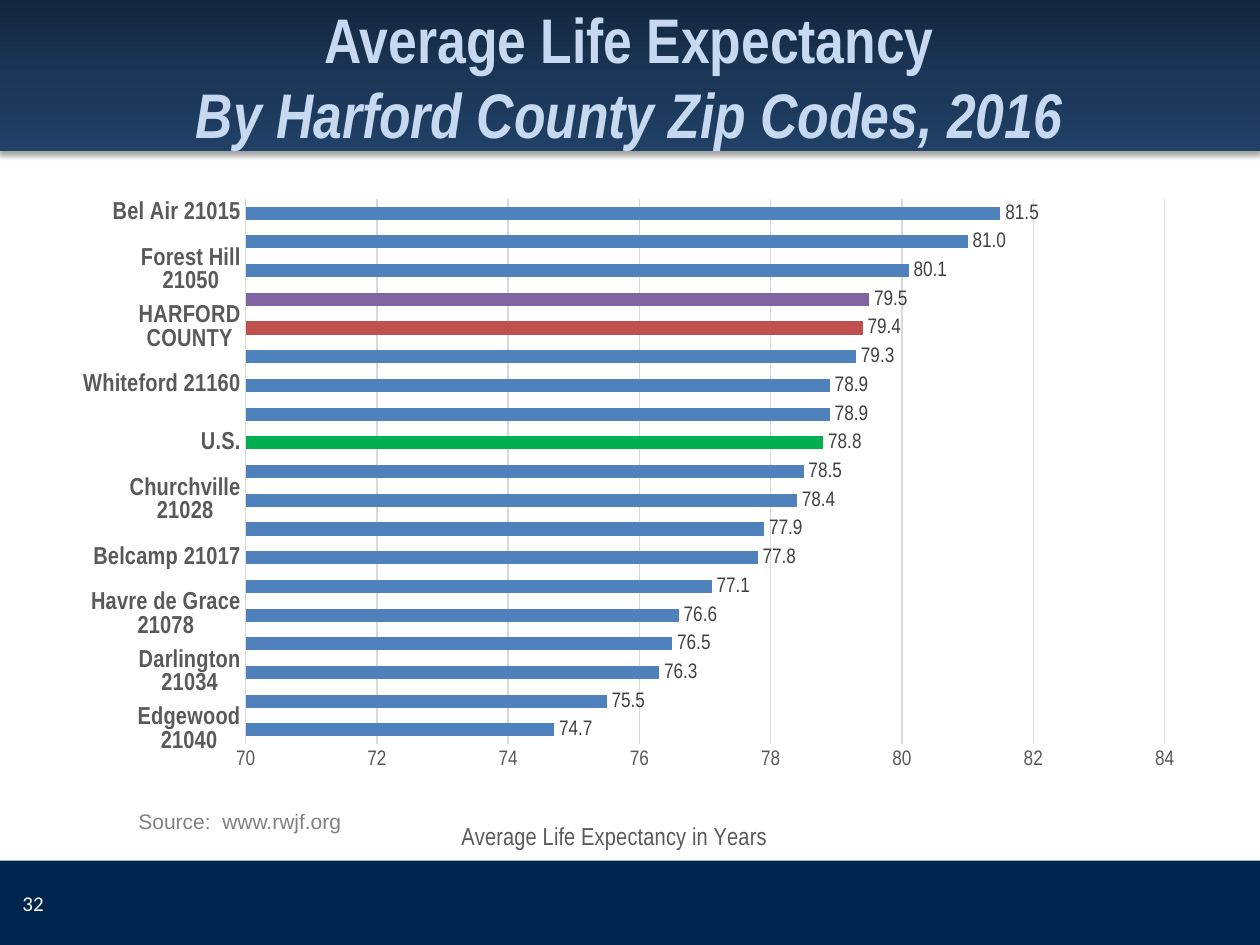
from dataclasses import dataclass
from typing import NamedTuple

from pptx import Presentation
from pptx.chart.axis import CategoryAxis, ValueAxis
from pptx.chart.chart import Chart
from pptx.chart.data import CategoryChartData
from pptx.dml.color import RGBColor as Color
from pptx.enum.chart import XL_CHART_TYPE as ChartType
from pptx.enum.chart import XL_LABEL_POSITION as LabelPosition
from pptx.enum.chart import XL_TICK_MARK as TickMark
from pptx.enum.shapes import MSO_SHAPE as Preset
from pptx.enum.text import MSO_ANCHOR as Anchor
from pptx.enum.text import MSO_AUTO_SIZE as AutoSize
from pptx.enum.text import PP_ALIGN as Align
from pptx.oxml import parse_xml
from pptx.oxml.ns import nsdecls
from pptx.shapes.base import BaseShape
from pptx.slide import Slide
from pptx.text.text import Font
from pptx.util import Inches, Pt


@dataclass(frozen=True)
class Theme:
    footer: str = "002650"
    footer_text: str = "FFFFFF"
    title_text: str = "C6D9F1"
    title_stops: tuple[str, ...] = ("13263C", "1B3656", "204066")
    bar: str = "4F81BD"
    nation: str = "00B050"
    county: str = "C0504D"
    state: str = "8064A2"
    grid: str = "D9D9D9"
    axis_text: str = "595959"
    label_text: str = "404040"
    source_text: str = "808080"
    narrow: str = "Arial Narrow"
    sans: str = "Arial"
    number: str = "Calibri"
    title_size: int = 36
    category_size: int = 14
    small_size: int = 12


THEME = Theme()


class Area(NamedTuple):
    name: str
    years: float
    color: str = THEME.bar


class Box(NamedTuple):
    left: float
    top: float
    width: float
    height: float


AREAS = [
    Area("Edgewood 21040", 74.7),
    Area("Aberdeen 21001", 75.5),
    Area("Darlington 21034", 76.3),
    Area("Street 21154", 76.5),
    Area("Havre de Grace 21078", 76.6),
    Area("White Hall 21161", 77.1),
    Area("Belcamp 21017", 77.8),
    Area("Jarrettsville 21084", 77.9),
    Area("Churchville 21028", 78.4),
    Area("Joppa 21085", 78.5),
    Area("U.S.", 78.8, THEME.nation),
    Area("Pylesville 21132", 78.9),
    Area("Whiteford 21160", 78.9),
    Area("Fallston 21047", 79.3),
    Area("HARFORD COUNTY", 79.4, THEME.county),
    Area("MARYLAND", 79.5, THEME.state),
    Area("Forest Hill 21050", 80.1),
    Area("Abingdon 21009", 81.0),
    Area("Bel Air 21015", 81.5),
]


def style(font: Font, name: str, size: int, color: str, bold: bool = False) -> None:
    font.name = name
    font.size = Pt(size)
    font.bold = bold
    font.color.rgb = Color.from_string(color)


def place(shape: BaseShape, box: Box) -> None:
    shape.left, shape.top, shape.width, shape.height = map(Inches, box)


def add_footer(slide: Slide) -> None:
    shape = slide.shapes.add_shape(Preset.RECTANGLE, *map(Inches, Box(0, 6.83, 10, 0.67)))
    shape.shadow.inherit = False
    shape.fill.solid()
    shape.fill.fore_color.rgb = Color.from_string(THEME.footer)
    shape.line.fill.background()


def add_text(slide: Slide, text: str, box: Box, font: str, color: str, anchor: Anchor) -> None:
    text_frame = slide.shapes.add_textbox(*map(Inches, box)).text_frame
    text_frame.word_wrap = True
    text_frame.vertical_anchor = anchor
    text_frame.text = text
    style(text_frame.paragraphs[0].runs[0].font, font, THEME.small_size, color)


def manual_layout(*values: tuple[str, object]) -> object:
    entries = "".join(f'<c:{tag} val="{value}"/>' for tag, value in values)
    return parse_xml(
        f"<c:layout {nsdecls('c')}><c:manualLayout>{entries}</c:manualLayout></c:layout>"
    )


def format_category_axis(axis: CategoryAxis) -> None:
    axis.major_tick_mark = axis.minor_tick_mark = TickMark.NONE
    axis.format.line.color.rgb = Color.from_string(THEME.grid)
    axis.format.line.width = Pt(0.75)
    style(axis.tick_labels.font, THEME.narrow, THEME.category_size, THEME.axis_text, True)


def format_value_axis(axis: ValueAxis) -> None:
    axis.minimum_scale, axis.maximum_scale, axis.major_unit = 70, 84, 2
    axis.major_tick_mark = axis.minor_tick_mark = TickMark.NONE
    axis.format.line.fill.background()
    grid = axis.major_gridlines.format.line
    grid.color.rgb = Color.from_string(THEME.grid)
    grid.width = Pt(0.75)
    axis.tick_labels.number_format = "#,##0"
    axis.tick_labels.number_format_is_linked = False
    style(axis.tick_labels.font, THEME.narrow, THEME.small_size, THEME.axis_text)
    title = axis.axis_title
    title.text_frame.text = "Average Life Expectancy in Years"
    run = title.text_frame.paragraphs[0].runs[0]
    style(run.font, THEME.narrow, THEME.category_size, THEME.axis_text)
    element = title._element
    for layout in element.findall("{*}layout"):
        element.remove(layout)
    position = manual_layout(("xMode", "edge"), ("yMode", "edge"), ("x", 0.34), ("y", 0.87))
    element.find("{*}tx").addnext(position)


def format_bars(chart: Chart) -> None:
    plot = chart.plots[0]
    plot.gap_width = 119
    plot.vary_by_categories = False
    series = plot.series[0]
    series.format.fill.solid()
    series.format.fill.fore_color.rgb = Color.from_string(THEME.bar)
    for index, area in enumerate(AREAS):
        if area.color != THEME.bar:
            fill = series.points[index].format.fill
            fill.solid()
            fill.fore_color.rgb = Color.from_string(area.color)
    labels = series.data_labels
    labels.show_value = True
    labels.position = LabelPosition.OUTSIDE_END
    labels.number_format = "0.0"
    labels.number_format_is_linked = False
    style(labels.font, THEME.narrow, THEME.small_size, THEME.label_text)


def add_life_chart(slide: Slide) -> None:
    data = CategoryChartData(number_format="0.0")
    data.categories = [area.name for area in AREAS]
    data.add_series("Series 1", [area.years for area in AREAS])
    box = map(Inches, Box(0.66, 0.82, 8.67, 6.54))
    chart = slide.shapes.add_chart(ChartType.BAR_CLUSTERED, *box, data).chart
    chart.has_legend = False
    chart.has_title = False
    style(chart.font, THEME.narrow, 10, "000000")
    format_category_axis(chart.category_axis)
    format_value_axis(chart.value_axis)
    format_bars(chart)
    space = chart._chartSpace
    space.find("{*}chart").addnext(
        parse_xml(f"<c:spPr {nsdecls('c', 'a')}><a:noFill/><a:ln><a:noFill/></a:ln></c:spPr>")
    )
    plot_area = space.find("{*}chart/{*}plotArea")
    for layout in plot_area.findall("{*}layout"):
        plot_area.remove(layout)
    plot_area.insert(0, manual_layout(
        ("layoutTarget", "inner"), ("xMode", "edge"), ("yMode", "edge"),
        ("x", 0.146), ("y", 0.116), ("w", 0.844), ("h", 0.662),
    ))


def format_title(slide: Slide) -> None:
    shape = slide.shapes.title
    place(shape, Box(-0.01, 0, 10.01, 1.2))
    stops = "".join(
        f'<a:gs pos="{index * 50000}"><a:srgbClr val="{color}"/></a:gs>'
        for index, color in enumerate(THEME.title_stops)
    )
    properties = shape._element.spPr
    properties.append(parse_xml(
        f"<a:gradFill {nsdecls('a')}><a:gsLst>{stops}</a:gsLst>"
        '<a:lin ang="5400000" scaled="0"/></a:gradFill>'
    ))
    properties.append(parse_xml(
        f"<a:effectLst {nsdecls('a')}>"
        f'<a:outerShdw blurRad="{Pt(3.1)}" dist="{Pt(1.8)}" dir="5400000" rotWithShape="0">'
        '<a:srgbClr val="000000"><a:alpha val="35000"/></a:srgbClr></a:outerShdw></a:effectLst>'
    ))
    text_frame = shape.text_frame
    text_frame.text = "Average Life Expectancy\nBy Harford County Zip Codes, 2016"
    text_frame.auto_size = AutoSize.NONE
    text_frame.vertical_anchor = Anchor.MIDDLE
    for paragraph in text_frame.paragraphs:
        paragraph.alignment = Align.CENTER
        style(paragraph.runs[0].font, THEME.narrow, THEME.title_size, THEME.title_text, True)
    text_frame.paragraphs[1].runs[0].font.italic = True
    slide.shapes._spTree.append(shape._element)


def main() -> None:
    presentation = Presentation()
    presentation.slide_width, presentation.slide_height = Inches(10), Inches(7.5)
    slide = presentation.slides.add_slide(presentation.slide_layouts[5])
    add_footer(slide)
    add_text(slide, "32", Box(0.08, 6.97, 2.33, 0.4),
             THEME.number, THEME.footer_text, Anchor.MIDDLE)
    add_life_chart(slide)
    add_text(slide, "Source:  www.rwjf.org", Box(1, 6.37, 5.71, 0.3),
             THEME.sans, THEME.source_text, Anchor.TOP)
    format_title(slide)
    presentation.save("out.pptx")


if __name__ == "__main__":
    main()
